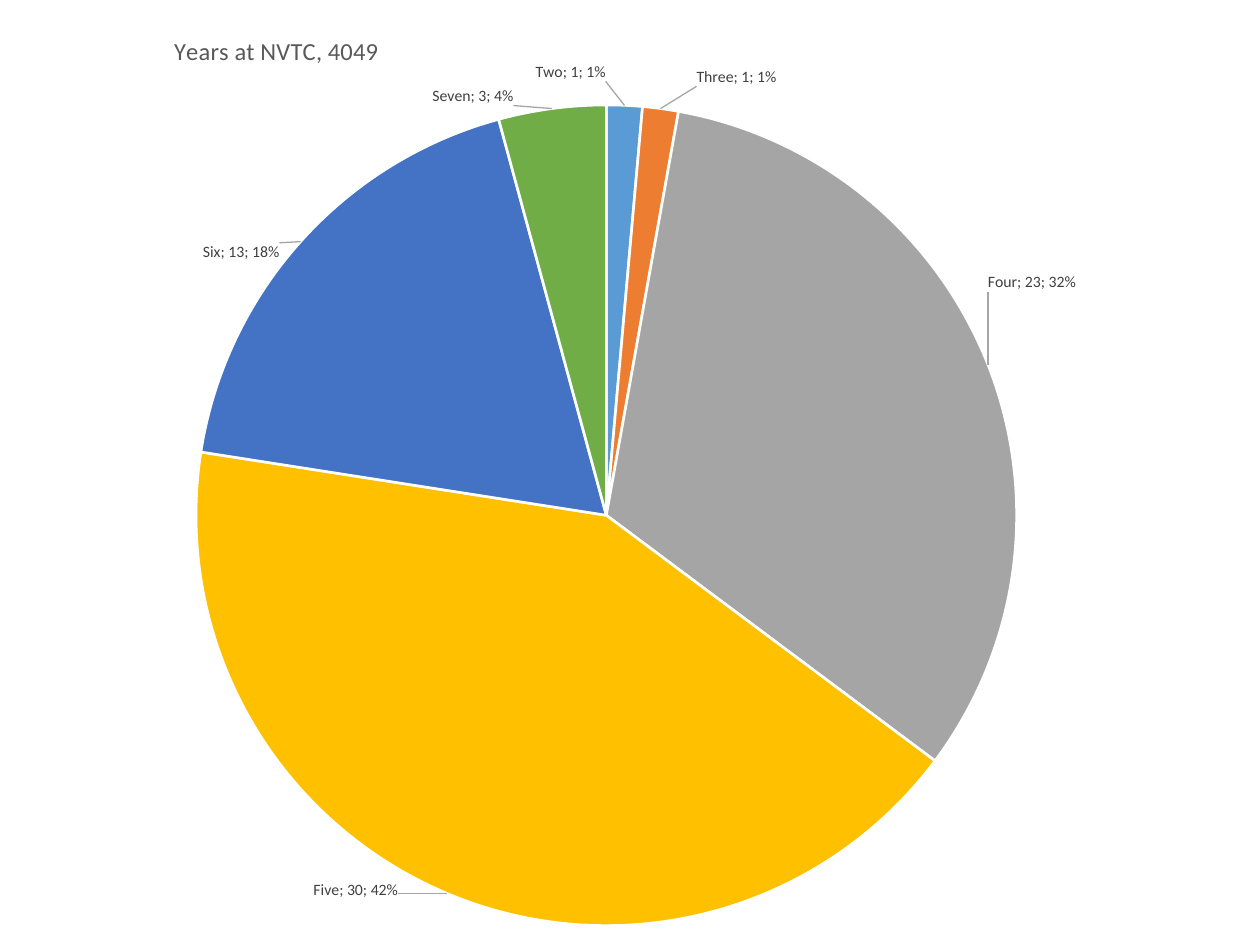
from copy import deepcopy
from dataclasses import dataclass

from lxml import etree
from pptx import Presentation
from pptx.chart.data import CategoryChartData
from pptx.dml.color import RGBColor
from pptx.enum.chart import XL_CHART_TYPE, XL_LABEL_POSITION
from pptx.oxml import parse_xml
from pptx.oxml.ns import nsdecls, qn
from pptx.util import Pt

PIE = XL_CHART_TYPE.PIE
OUTSIDE_END = XL_LABEL_POSITION.OUTSIDE_END


@dataclass(frozen=True)
class Theme:
    font: str = "Calibri"
    title_size: float = 14
    label_size: float = 9
    title_color: str = "595959"
    label_color: str = "404040"
    border_color: str = "FFFFFF"
    leader_color: str = "A6A6A6"
    slices: tuple = ("5B9BD5", "ED7D31", "A5A5A5", "FFC000", "4472C4", "70AD47")


THEME = Theme()
YEARS = {"Two": 1, "Three": 1, "Four": 23, "Five": 30, "Six": 13, "Seven": 3}
LABEL_SHIFTS = [(-31, -9.5), (20, -8.5), (-4, -40), (-26.5, -11), (-9, 14), (-21.5, 2.5)]
CHART_LEFT, CHART_TOP, CHART_WIDTH, CHART_HEIGHT = 75, -5, 570, 550
PIE_LEFT, PIE_TOP, PIE_DIAMETER = 37, 65, 469
TITLE_LEFT, TITLE_TOP = 22, 22


def format_font(font, size, color):
    font.name = THEME.font
    font.size = Pt(size)
    font.bold = False
    font.color.rgb = RGBColor.from_string(color)


def add_value(parent, tag, value):
    etree.SubElement(parent, qn(f"c:{tag}")).set("val", str(value))


def set_layout(parent, index, left, top, size=None, edge=True):
    for old in parent.findall(qn("c:layout")):
        parent.remove(old)
    layout = parse_xml(f"<c:layout {nsdecls('c')}><c:manualLayout/></c:layout>")
    manual = layout[0]
    if size:
        add_value(manual, "layoutTarget", "inner")
    if edge:
        add_value(manual, "xMode", "edge")
        add_value(manual, "yMode", "edge")
    add_value(manual, "x", left / CHART_WIDTH)
    add_value(manual, "y", top / CHART_HEIGHT)
    if size:
        add_value(manual, "w", size / CHART_WIDTH)
        add_value(manual, "h", size / CHART_HEIGHT)
    parent.insert(index, layout)


def add_pie(page):
    data = CategoryChartData()
    data.categories = list(YEARS)
    data.add_series("Series 1", list(YEARS.values()))
    frame = page.shapes.add_chart(
        PIE, Pt(CHART_LEFT), Pt(CHART_TOP), Pt(CHART_WIDTH), Pt(CHART_HEIGHT), data)
    chart = frame.chart
    chart.has_legend = False
    chart.font.name = THEME.font
    chart.font.size = Pt(10)
    plot_area = next(chart.element.iter(qn("c:plotArea")))
    set_layout(plot_area, 0, PIE_LEFT, PIE_TOP, PIE_DIAMETER)
    return chart


def add_title(chart, text, size, color):
    title = chart.chart_title
    title.text_frame.text = text
    format_font(title.text_frame.paragraphs[0].runs[0].font, size, color)
    set_layout(next(chart.element.iter(qn("c:title"))), 1, TITLE_LEFT, TITLE_TOP)


def color_slices(series):
    for index, color in enumerate(THEME.slices):
        style = series.points[index].format
        style.fill.solid()
        style.fill.fore_color.rgb = RGBColor.from_string(color)
        style.line.width = Pt(1.5)
        style.line.color.rgb = RGBColor.from_string(THEME.border_color)


def add_leader_lines(label_set):
    separator = parse_xml(f"<c:separator {nsdecls('c')}>; </c:separator>")
    label_set.find(qn("c:showBubbleSize")).addnext(separator)
    for old in label_set.findall(qn("c:showLeaderLines")):
        label_set.remove(old)
    add_value(label_set, "showLeaderLines", 1)
    label_set.append(parse_xml(
        f"<c:leaderLines {nsdecls('c', 'a')}><c:spPr><a:ln w='9525'><a:solidFill>"
        f"<a:srgbClr val='{THEME.leader_color}'/></a:solidFill></a:ln></c:spPr></c:leaderLines>"))


def add_labels(chart, series):
    labels = series.data_labels
    format_font(labels.font, THEME.label_size, THEME.label_color)
    labels.position = OUTSIDE_END
    labels.show_value = True
    labels.show_category_name = True
    labels.show_percentage = True
    label_set = next(chart.element.iter(qn("c:dLbls")))
    shared = [deepcopy(child) for child in label_set if child.tag != qn("c:showLeaderLines")]
    add_leader_lines(label_set)
    for index, shift in enumerate(LABEL_SHIFTS):
        label = parse_xml(f"<c:dLbl {nsdecls('c')}/>")
        add_value(label, "idx", index)
        label.extend(deepcopy(shared))
        label.append(deepcopy(label_set.find(qn("c:separator"))))
        set_layout(label, 1, *shift, edge=False)
        label_set.insert(index, label)


def main():
    deck = Presentation()
    deck.slide_width, deck.slide_height = Pt(720), Pt(540)
    page = deck.slides.add_slide(deck.slide_layouts[6])
    chart = add_pie(page)
    add_title(chart, "Years at NVTC, 4049", size=THEME.title_size, color=THEME.title_color)
    series = chart.plots[0].series[0]
    color_slices(series)
    add_labels(chart, series)
    deck.save("out.pptx")


if __name__ == "__main__":
    main()
